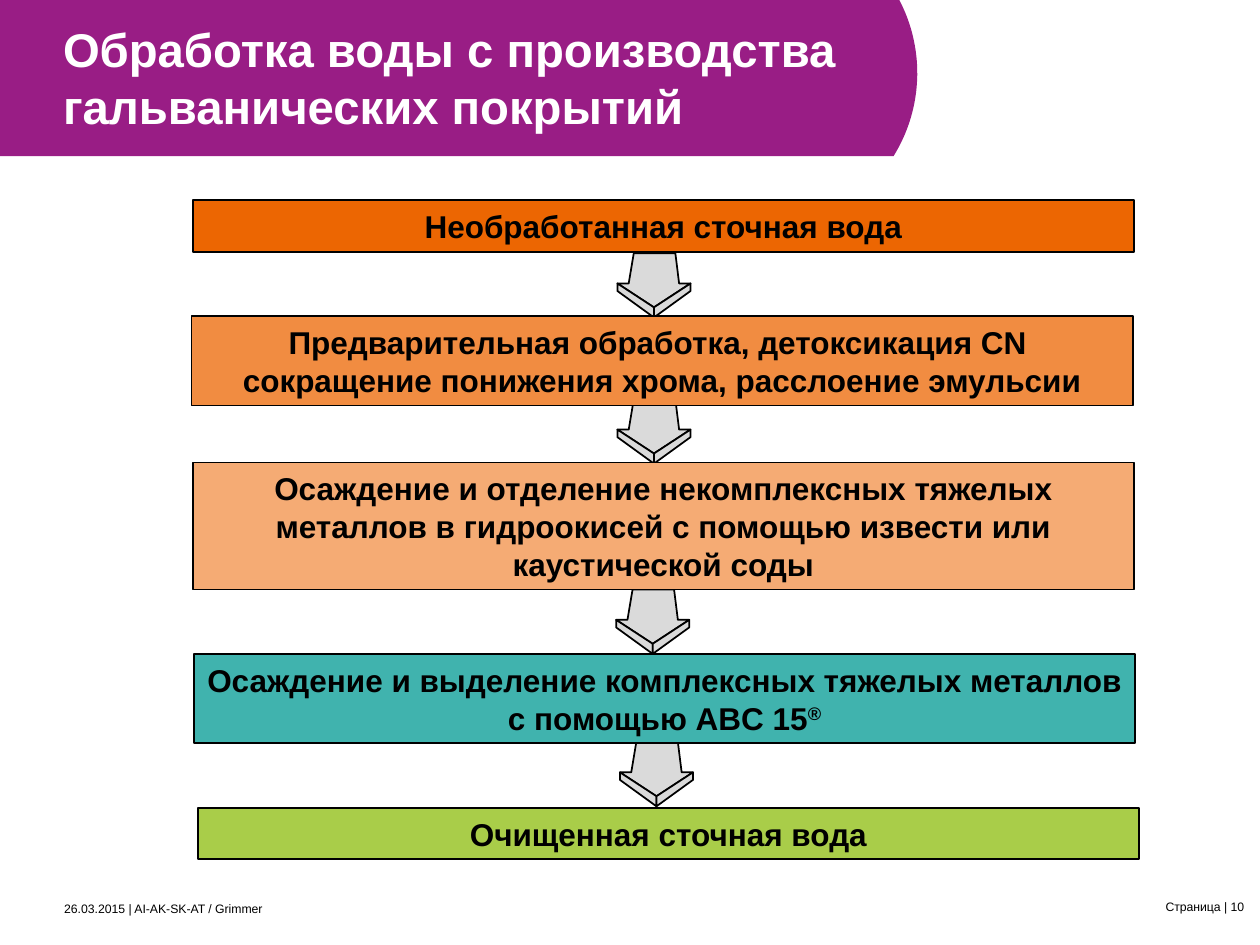
import math
from dataclasses import dataclass

from pptx import Presentation
from pptx.dml.color import RGBColor
from pptx.enum import text as t
from pptx.util import Inches, Pt

PURPLE = RGBColor(0x99, 0x1D, 0x85)
GREY = RGBColor(0xDA, 0xDA, 0xDA)
BLACK = RGBColor(0, 0, 0)
WHITE = RGBColor(0xFF, 0xFF, 0xFF)
ORANGE = RGBColor(0xEC, 0x66, 0x02)
MID_ORANGE = RGBColor(0xF1, 0x8C, 0x41)
PALE_ORANGE = RGBColor(0xF5, 0xAB, 0x74)
TEAL = RGBColor(0x40, 0xB3, 0xAE)
GREEN = RGBColor(0xA9, 0xCD, 0x49)

Point = tuple[float, float]


@dataclass(frozen=True)
class Step:
    left: float
    top: float
    height: float
    fill: RGBColor
    wording: str
    superscript: str = ""


@dataclass(frozen=True)
class Arrow:
    center: float
    top: float


@dataclass(frozen=True)
class Label:
    left: float
    top: float
    width: float
    height: float
    wording: str
    size: float
    color: RGBColor = BLACK
    bold: bool = False
    anchor: t.MSO_ANCHOR = t.MSO_ANCHOR.TOP


STEP_WIDTH = 7.47
STEPS = [
    Step(1.53, 1.59, 0.41, ORANGE, "Необработанная сточная вода"),
    Step(1.52, 2.51, 0.71, MID_ORANGE,
         "Предварительная обработка, детоксикация CN \v"
         "сокращение понижения хрома, расслоение эмульсии"),
    Step(1.53, 3.67, 1.01, PALE_ORANGE,
         "Осаждение и отделение некомплексных тяжелых металлов "
         "в гидроокисей с помощью извести или каустической соды"),
    Step(1.54, 5.19, 0.71, TEAL,
         "Осаждение и выделение комплексных тяжелых металлов\v"
         "с помощью ABC 15", "®"),
    Step(1.57, 6.41, 0.41, GREEN, "Очищенная сточная вода"),
]
ARROWS = [Arrow(5.19, 2.01), Arrow(5.19, 3.17), Arrow(5.18, 4.68), Arrow(5.21, 5.89)]
LABELS = [
    Label(0.5, 0.12, 6.55, 0.94, "Обработка воды с производства гальванических покрытий",
          27, WHITE, True, t.MSO_ANCHOR.BOTTOM),
    Label(0.51, 7.15, 4.96, 0.12, "26.03.2015 | AI-AK-SK-AT / Grimmer", 7),
    Label(9.25, 7.14, 0.75, 0.12, "Страница | 10", 7),
]


def apply_format(target, values: dict) -> None:
    for name, value in values.items():
        setattr(target, name, value)


def style_shape(shape, fill: RGBColor, outlined: bool = True) -> None:
    shape.shadow.inherit = False
    shape.fill.solid()
    shape.fill.fore_color.rgb = fill
    if outlined:
        shape.line.color.rgb = BLACK
        shape.line.width = Pt(1)
    else:
        shape.line.fill.background()


def style_runs(paragraph, size: float, color: RGBColor, bold: bool) -> None:
    for run in paragraph.runs:
        apply_format(run.font, {"name": "Arial", "size": Pt(size), "bold": bold})
        run.font.color.rgb = color


def draw_outline(shapes, points: list[Point], fill: RGBColor, outlined: bool = True) -> None:
    corners = [(Inches(x), Inches(y)) for x, y in points]
    builder = shapes.build_freeform(*corners[0])
    builder.add_line_segments(corners[1:], close=True)
    style_shape(builder.convert_to_shape(), fill, outlined)


def draw_banner(slide) -> None:
    center_x, center_y, radius, bottom, count = 6.03, 0.58, 1.25, 1.24, 40
    start = math.asin(-center_y / radius)
    end = math.asin((bottom - center_y) / radius)
    angles = [start + (end - start) * index / count for index in range(count + 1)]
    arc = [(center_x + radius * math.cos(angle), center_y + radius * math.sin(angle))
           for angle in angles]
    draw_outline(slide.shapes, [(0, 0), *arc, (0, bottom)], PURPLE, False)


def draw_arrow(slide, arrow: Arrow) -> None:
    group = slide.shapes.add_group_shape()
    x, top = arrow.center, arrow.top
    head, tip, base = top + 0.24, top + 0.43, top + 0.51
    draw_outline(group.shapes, [
        (x - 0.16, top), (x + 0.17, top), (x + 0.2, head), (x + 0.29, head),
        (x, tip), (x - 0.29, head), (x - 0.2, head)], GREY)
    for side in (x - 0.29, x + 0.29):
        draw_outline(group.shapes, [(side, head), (x, tip), (x, base), (side, head + 0.06)], GREY)


def draw_step(slide, step: Step) -> None:
    shape = slide.shapes.add_shape(
        1, Inches(step.left), Inches(step.top), Inches(STEP_WIDTH), Inches(step.height))
    style_shape(shape, step.fill)
    frame = shape.text_frame
    apply_format(frame, {"word_wrap": True, "vertical_anchor": t.MSO_ANCHOR.MIDDLE})
    frame.text = step.wording
    paragraph = frame.paragraphs[0]
    paragraph.alignment = t.PP_ALIGN.CENTER
    if step.superscript:
        run = paragraph.add_run()
        run.text = step.superscript
        run.font._element.set("baseline", "30000")
    style_runs(paragraph, 18, BLACK, True)


def draw_label(slide, label: Label) -> None:
    shape = slide.shapes.add_textbox(
        Inches(label.left), Inches(label.top), Inches(label.width), Inches(label.height))
    frame = shape.text_frame
    apply_format(frame, {
        "word_wrap": True, "vertical_anchor": label.anchor, "margin_left": 0,
        "margin_right": 0, "margin_top": 0, "margin_bottom": 0})
    frame.text = label.wording
    style_runs(frame.paragraphs[0], label.size, label.color, label.bold)


def main() -> None:
    presentation = Presentation()
    apply_format(presentation, {"slide_width": Inches(10), "slide_height": Inches(7.5)})
    slide = presentation.slides.add_slide(presentation.slide_layouts[6])
    draw_banner(slide)
    for arrow in ARROWS:
        draw_arrow(slide, arrow)
    for step in STEPS:
        draw_step(slide, step)
    for label in LABELS:
        draw_label(slide, label)
    presentation.save("out.pptx")


if __name__ == "__main__":
    main()
